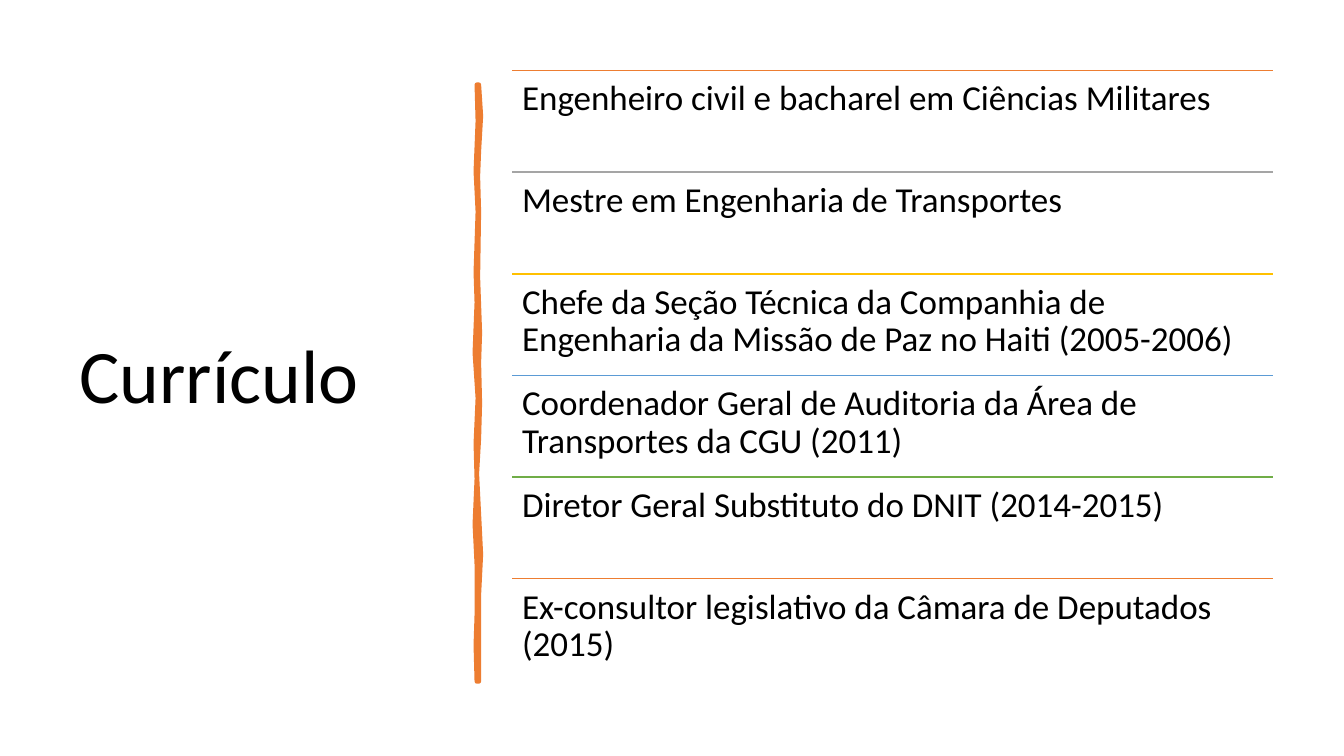
from pptx import Presentation, util as u
from pptx.dml.color import RGBColor
from pptx.enum import shapes, text
from lxml import etree

BLACK = RGBColor(0x00, 0x00, 0x00)
ORANGE = RGBColor(0xED, 0x7D, 0x31)
GRAY = RGBColor(0xA5, 0xA5, 0xA5)
GOLD = RGBColor(0xFF, 0xC0, 0x00)
BLUE = RGBColor(0x5B, 0x9B, 0xD5)
GREEN = RGBColor(0x70, 0xAD, 0x47)

CAREER = [
    ("Engenheiro civil e bacharel em Ciências Militares", ORANGE),
    ("Mestre em Engenharia de Transportes", GRAY),
    ("Chefe da Seção Técnica da Companhia de Engenharia da Missão de Paz "
     "no Haiti (2005-2006)", GOLD),
    ("Coordenador Geral de Auditoria da Área de Transportes da CGU (2011)", BLUE),
    ("Diretor Geral Substituto do DNIT (2014-2015)", GREEN),
    ("Ex-consultor legislativo da Câmara de Deputados (2015)", ORANGE),
]
LIST_LEFT, LIST_TOP, LIST_WIDTH, LIST_HEIGHT = 5.08, 0.7, 7.55, 6.05
ROW = LIST_HEIGHT / len(CAREER)

# Edges of the brush stroke, as (x, y) in inches
RIGHT_EDGE = [(4.75, 0.84), (4.77, 1.15), (4.75, 1.5), (4.74, 1.75), (4.75, 2.1),
              (4.74, 2.75), (4.76, 3.3), (4.75, 3.6), (4.76, 4.0), (4.75, 4.35),
              (4.73, 4.7), (4.75, 5.1), (4.77, 5.5), (4.75, 5.9), (4.75, 6.76)]
LEFT_EDGE = [(4.73, 6.76), (4.72, 6.4), (4.73, 6.1), (4.73, 5.6), (4.71, 5.2),
             (4.73, 4.75), (4.72, 4.4), (4.74, 3.95), (4.71, 3.5), (4.73, 3.0),
             (4.72, 2.7), (4.74, 2.1), (4.72, 1.7), (4.74, 1.2), (4.73, 0.84)]


class Deck:
    def __init__(self):
        self.prs = Presentation()
        self.prs.slide_width, self.prs.slide_height = u.Inches(13.33), u.Inches(7.5)
        self.s = self.prs.slides.add_slide(self.prs.slide_layouts[5])
        self.font = "Calibri"

    def set_text(self, tf, content, size, anchor, space_after=0):
        tf.word_wrap = True
        tf.auto_size = text.MSO_AUTO_SIZE.NONE
        tf.vertical_anchor = anchor
        p = tf.paragraphs[0]
        p.alignment = text.PP_ALIGN.LEFT
        p.line_spacing = 0.9
        p.space_after = u.Pt(space_after)
        r = p.add_run()
        r.text = content
        r.font.name, r.font.size = self.font, u.Pt(size)
        r.font.color.rgb = BLACK

    def title(self, content, x, y, w, h):
        sp = self.s.shapes.title
        sp.left, sp.top, sp.width, sp.height = map(u.Inches, (x, y, w, h))
        self.set_text(sp.text_frame, content, 54, text.MSO_ANCHOR.MIDDLE)

    def brush_stroke(self, points, color):
        (x, y), *rest = points
        fb = self.s.shapes.build_freeform(u.Inches(x), u.Inches(y))
        fb.add_line_segments([(u.Inches(a), u.Inches(b)) for a, b in rest], close=True)
        sp = fb.convert_to_shape()
        sp.shadow.inherit = False
        sp.fill.solid()
        sp.fill.fore_color.rgb = sp.line.color.rgb = color
        sp.line.width = u.Pt(3.25)

    def rule(self, parent, x, y, w, color):
        ends = map(u.Inches, (x, y, x + w, y))
        line = parent.shapes.add_connector(shapes.MSO_CONNECTOR.STRAIGHT, *ends)
        line.line.color.rgb, line.line.width = color, u.Pt(1)
        ns = "http://schemas.openxmlformats.org/drawingml/2006/main"
        etree.SubElement(line._element.spPr, f"{{{ns}}}effectLst")

    def entry(self, parent, content, x, y, w, h):
        tf = parent.shapes.add_textbox(*map(u.Inches, (x, y, w, h))).text_frame
        tf.margin_left = tf.margin_right = u.Inches(0.1)
        tf.margin_top = tf.margin_bottom = u.Inches(0.1)
        self.set_text(tf, content, 25, text.MSO_ANCHOR.TOP, space_after=8.75)

    def ruled_list(self, items):
        group = self.s.shapes.add_group_shape()
        for i, (content, color) in enumerate(items):
            y = LIST_TOP + i * ROW
            self.rule(group, LIST_LEFT, y, LIST_WIDTH, color)
            self.entry(group, content, LIST_LEFT, y, LIST_WIDTH, ROW)


def main():
    deck = Deck()
    deck.title("Currículo", 0.69, 0.7, 3.74, 6.11)
    deck.brush_stroke(RIGHT_EDGE + LEFT_EDGE, ORANGE)
    deck.ruled_list(CAREER)
    deck.prs.save("out.pptx")


if __name__ == "__main__":
    main()
